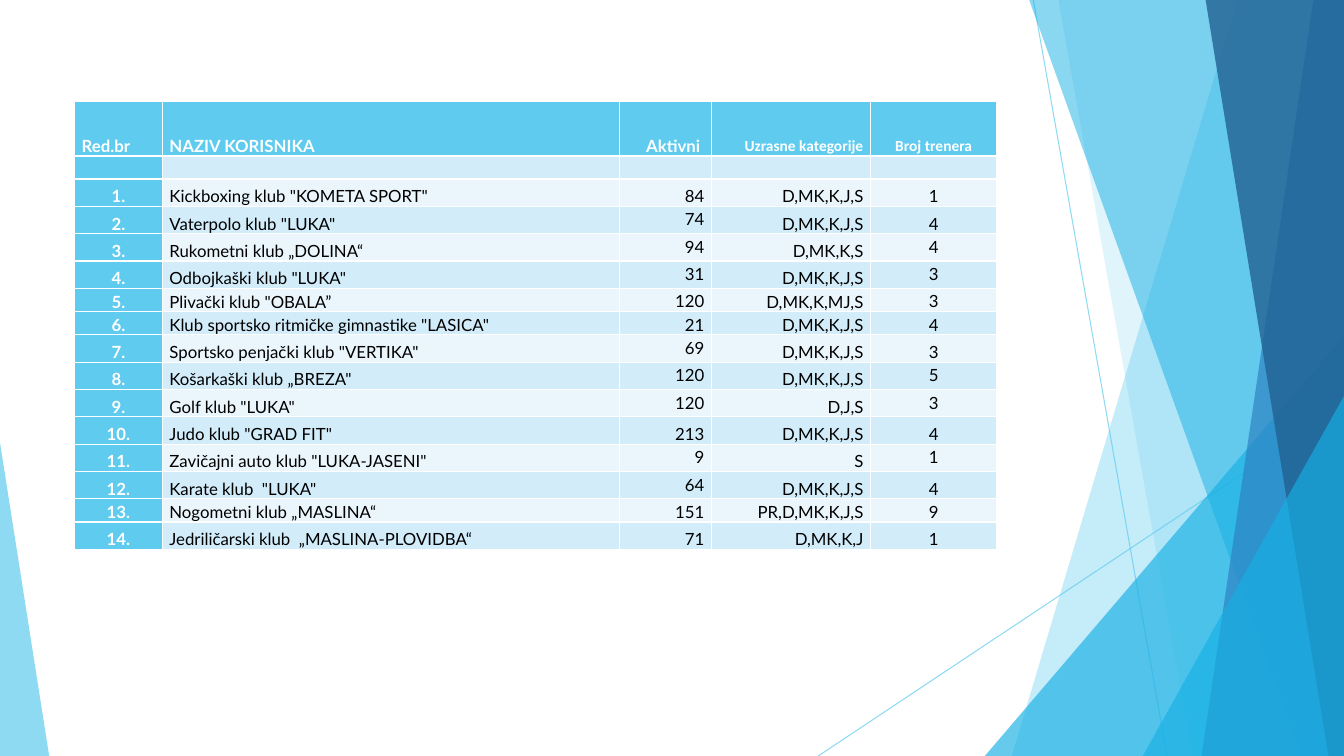
"""Build a slide with a table of sports clubs framed by translucent facets."""
from dataclasses import dataclass

from lxml import etree
from pptx import Presentation
from pptx import util as u
from pptx.dml import color, fill as fills
from pptx.enum import shapes, text
from pptx.oxml import ns

WIDTH, HEIGHT, TOP = 33.87, 19.05, -0.02
COLORS = {
    "sky": "5FCBEF", "cyan": "17B0E4", "blue": "2E83C3", "navy": "226292",
    "band_dark": "D2ECF9", "band_light": "EAF6FC", "white": "FFFFFF", "black": "000000",
}


@dataclass(frozen=True)
class Ray:
    start: tuple[float, float]
    end: tuple[float, float]


@dataclass(frozen=True)
class Facet:
    top_x: float
    bottom_x: float
    color: str
    opacity: int


@dataclass(frozen=True)
class Corner:
    left: float
    top: float
    width: float
    apex: int
    color: str
    opacity: int


@dataclass(frozen=True)
class Club:
    name: str
    active: int
    ages: str
    trainers: int
    raised: str = ""
    height: float = 0.69


@dataclass(frozen=True)
class Column:
    title: str
    width: float
    align: text.PP_ALIGN
    title_align: text.PP_ALIGN
    title_font: str = "Lato"
    title_size: int = 12


LEFT, CENTER, RIGHT = text.PP_ALIGN.LEFT, text.PP_ALIGN.CENTER, text.PP_ALIGN.RIGHT
COLUMNS = [
    Column("Red.br", 2.21, CENTER, LEFT),
    Column("NAZIV KORISNIKA", 11.53, LEFT, LEFT),
    Column("Aktivni ", 2.31, RIGHT, RIGHT),
    Column("Uzrasne kategorije", 4.01, RIGHT, RIGHT, "Calibri", 11),
    Column("Broj trenera", 3.18, CENTER, CENTER, "Calibri", 11),
]
HEADER_HEIGHT, SHORT = 1.37, 0.58
ACTIVE, BOTH = "active", "active trainers"
CLUBS = [
    Club('Kickboxing klub "KOMETA SPORT"', 84, "D,MK,K,J,S", 1),
    Club('Vaterpolo klub "LUKA"', 74, "D,MK,K,J,S", 4, ACTIVE),
    Club("Rukometni klub „DOLINA“", 94, "D,MK,K,S", 4, BOTH),
    Club('Odbojkaški klub "LUKA"', 31, "D,MK,K,J,S", 3, BOTH),
    Club('Plivački klub "OBALA”', 120, "D,MK,K,MJ,S", 3, BOTH, SHORT),
    Club('Klub sportsko ritmičke gimnastike "LASICA"', 21, "D,MK,K,J,S", 4, BOTH, SHORT),
    Club('Sportsko penjački klub "VERTIKA"', 69, "D,MK,K,J,S", 3, ACTIVE),
    Club('Košarkaški klub „BREZA"', 120, "D,MK,K,J,S", 5, BOTH),
    Club('Golf klub "LUKA"', 120, "D,J,S", 3, BOTH),
    Club('Judo klub "GRAD FIT"', 213, "D,MK,K,J,S", 4),
    Club('Zavičajni auto klub "LUKA-JASENI"', 9, "S", 1, BOTH),
    Club('Karate klub  "LUKA"', 64, "D,MK,K,J,S", 4, ACTIVE),
    Club("Nogometni klub „MASLINA“", 151, "PR,D,MK,K,J,S", 9, height=SHORT),
    Club("Jedriličarski klub  „MASLINA-PLOVIDBA“", 71, "D,MK,K,J", 1),
]
RAYS = [Ray((26.04, 0), (29.41, HEIGHT)), Ray((WIDTH, 10.24), (20.62, HEIGHT))]
DECORATION = [
    Facet(31.19, 25.5, "sky", 36),
    Facet(26.67, 30.05, "sky", 20),
    Corner(24.82, 8.46, 9.05, 1, "cyan", 66),
    Facet(25.93, 32.79, "cyan", 50),
    Facet(33.1, 30.28, "blue", 70),
    Facet(30.38, 33.48, "navy", 80),
    Corner(28.8, 9.98, 5.07, 1, "cyan", 66),
    Corner(0, 11.15, 1.24, 0, "sky", 70),
]


def rgb(name: str) -> color.RGBColor:
    return color.RGBColor.from_string(COLORS[name])


def paint(fill: fills.FillFormat, name: str) -> None:
    fill.solid()
    fill.fore_color.rgb = rgb(name)


def set_opacity(element: etree._Element, percent: int) -> None:
    tint = element.find(f".//{ns.qn('a:srgbClr')}")
    etree.SubElement(tint, ns.qn("a:alpha"), val=str(percent * 1000))


def draw_ray(slide, ray: Ray) -> None:
    points = [u.Cm(value) for value in (*ray.start, *ray.end)]
    connector = slide.shapes.add_connector(shapes.MSO_CONNECTOR.STRAIGHT, *points)
    connector.line.width = u.Pt(0.75)
    paint(connector.line.fill, "sky")
    properties = connector._element.spPr
    set_opacity(properties, 70)
    etree.SubElement(properties, ns.qn("a:effectLst"))


def draw_decoration(slide, item: Facet | Corner) -> None:
    if isinstance(item, Facet):
        builder = slide.shapes.build_freeform(u.Cm(item.top_x), u.Cm(TOP))
        outline = [(WIDTH, TOP), (WIDTH, HEIGHT), (item.bottom_x, HEIGHT)]
        builder.add_line_segments([(u.Cm(x), u.Cm(y)) for x, y in outline])
        shape = builder.convert_to_shape()
    else:
        box = (item.left, item.top, item.width, HEIGHT - item.top)
        shape = slide.shapes.add_shape(
            shapes.MSO_SHAPE.ISOSCELES_TRIANGLE, *(u.Cm(value) for value in box))
        shape.adjustments[0] = item.apex
    shape.shadow.inherit = False
    paint(shape.fill, item.color)
    set_opacity(shape._element.spPr, item.opacity)
    shape.line.fill.background()


def write_cell(cell, content: str, background: str, align: text.PP_ALIGN, raised: bool = False,
               ink: str = "black", font: str = "Lato", size: int = 12) -> None:
    paint(cell.fill, background)
    anchor = text.MSO_ANCHOR.TOP if raised else text.MSO_ANCHOR.BOTTOM
    layout = {"margin_left": u.Cm(0.18), "margin_right": u.Cm(0.18), "margin_top": 0,
              "margin_bottom": 0, "vertical_anchor": anchor}
    for name, value in layout.items():
        setattr(cell, name, value)
    paragraph = cell.text_frame.paragraphs[0]
    paragraph.alignment = align
    paragraph.line_spacing = 1.15
    if not content:
        etree.SubElement(paragraph._p, ns.qn("a:endParaRPr"), sz=str(size * 100))
        return
    run = paragraph.add_run()
    run.text = content
    style = {"name": font, "size": u.Pt(size), "bold": ink == "white"}
    for name, value in style.items():
        setattr(run.font, name, value)
    run.font.color.rgb = rgb(ink)


def draw_table(slide) -> None:
    heights = [HEADER_HEIGHT, SHORT, *(club.height for club in CLUBS)]
    table = slide.shapes.add_table(
        len(heights), len(COLUMNS), u.Cm(1.88), u.Cm(2.56),
        u.Cm(sum(column.width for column in COLUMNS)), u.Cm(sum(heights))).table
    table.first_col = True
    for row, height in zip(table.rows, heights):
        row.height = u.Cm(height)
    rows = [[""] * len(COLUMNS)]
    rows += [[f"{number}.", club.name, str(club.active), club.ages, str(club.trainers)]
             for number, club in enumerate(CLUBS, 1)]
    raised = [""] + [club.raised for club in CLUBS]
    fields = ["number", "name", "active", "ages", "trainers"]
    for index, column in enumerate(COLUMNS):
        table.columns[index].width = u.Cm(column.width)
        write_cell(table.cell(0, index), column.title, "sky", column.title_align,
                   ink="white", font=column.title_font, size=column.title_size)
        for line, values in enumerate(rows):
            band = "band_light" if line % 2 else "band_dark"
            write_cell(table.cell(line + 1, index), values[index],
                       band if index else "sky", column.align,
                       fields[index] in raised[line].split(),
                       "black" if index else "white")


def main() -> None:
    presentation = Presentation()
    presentation.slide_width, presentation.slide_height = u.Cm(WIDTH), u.Cm(HEIGHT)
    slide = presentation.slides.add_slide(presentation.slide_layouts[6])
    for ray in RAYS:
        draw_ray(slide, ray)
    for item in DECORATION:
        draw_decoration(slide, item)
    draw_table(slide)
    presentation.save("out.pptx")


if __name__ == "__main__":
    main()
